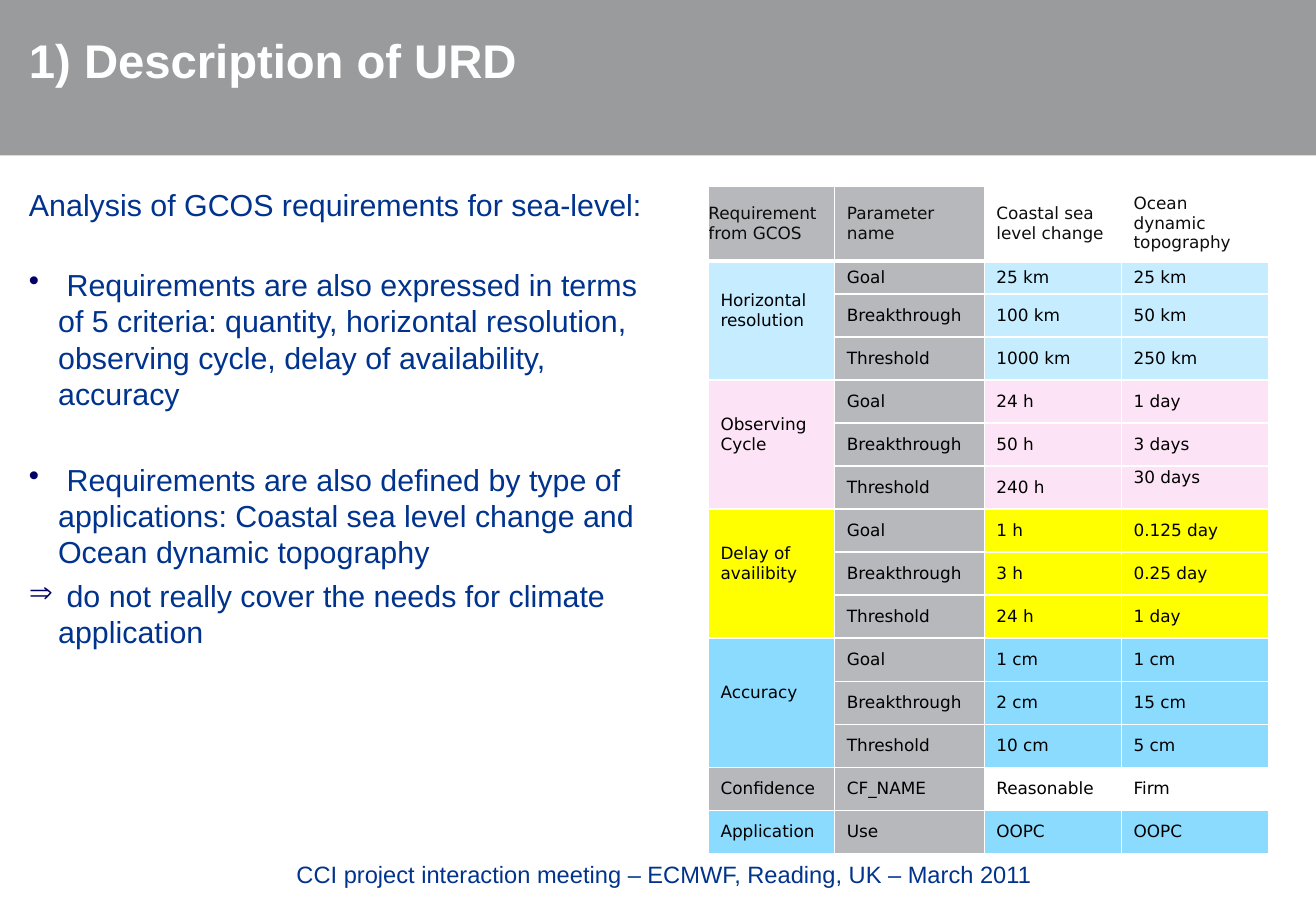
from pptx import Presentation
from pptx.dml.color import RGBColor as Color
from pptx.enum.shapes import MSO_SHAPE as Shape
from pptx.enum.text import MSO_ANCHOR as Anchor, PP_ALIGN as Align
from pptx.oxml import parse_xml
from pptx.oxml.ns import nsdecls
from pptx.util import Inches, Pt

COLORS = {
    "banner": "9A9B9C", "navy": "00338D", "bullet": "000066", "white": "FFFFFF",
    "black": "000000", "heading": "0D0D0D", "grey": "B6B8BC", "pale": "C5EDFF",
    "pink": "FDE3F6", "yellow": "FFFF00", "blue": "8BDBFF",
}
HEADINGS = ["Requirement from GCOS", "Parameter name",
            "Coastal sea level change", "Ocean dynamic topography"]
LEVELS = ["Goal", "Breakthrough", "Threshold"]
CRITERIA = [
    ("Horizontal resolution", "pale", ["25 km", "100 km", "1000 km"], ["25 km", "50 km", "250 km"]),
    ("Observing Cycle", "pink", ["24 h", "50 h", "240 h"], ["1 day", "3 days", "30 days"]),
    ("Delay of availibity", "yellow", ["1 h", "3 h", "24 h"], ["0.125 day", "0.25 day", "1 day"]),
    ("Accuracy", "blue", ["1 cm", "2 cm", "10 cm"], ["1 cm", "15 cm", "5 cm"]),
]
CLOSING_ROWS = [
    (["Confidence", "CF_NAME", "Reasonable", "Firm"], ["grey", "grey", "white", "white"]),
    (["Application", "Use", "OOPC", "OOPC"], ["blue", "grey", "blue", "blue"]),
]
COLUMN_WIDTHS = [1.04, 1.23, 1.13, 1.21]
HEADER_HEIGHT, FIRST_HEIGHT, TABLE_HEIGHT = 0.62, 0.27, 5.5
RAISED = 0.16


def color(name):
    """Return the named colour."""
    return Color.from_string(COLORS[name])


def write(para, text, size=18, font="Arial", ink="navy", bold=False,
          bullet=None, before=0, spacing=None, align=None):
    """Write formatted text into a paragraph."""
    if bullet:
        props = para._p.get_or_add_pPr()
        props.set("marL", str(Inches(0.24)))
        props.set("indent", str(-Inches(0.24)))
        props.append(parse_xml(f'<a:buClr {nsdecls("a")}><a:srgbClr val="{COLORS["bullet"]}"/></a:buClr>'))
        props.append(parse_xml(f'<a:buChar {nsdecls("a")} char="{bullet}"/>'))
    if before:
        para.space_before = Pt(before)
    if spacing:
        para.line_spacing = spacing
    if align is not None:
        para.alignment = align
    span = para.add_run()
    span.text = text
    span.font.size = Pt(size)
    span.font.name = font
    span.font.bold = bold
    span.font.color.rgb = color(ink)


def add_box(page, left, top, width, height):
    """Add a wrapping text box and return its frame."""
    box = page.shapes.add_textbox(Inches(left), Inches(top), Inches(width), Inches(height))
    box.text_frame.word_wrap = True
    return box.text_frame


def add_banner(page):
    """Add the grey band behind the title."""
    band = page.shapes.add_shape(Shape.RECTANGLE, 0, 0, Inches(10.83), Inches(1.28))
    band.shadow.inherit = False
    band.fill.solid()
    band.fill.fore_color.rgb = color("banner")
    band.line.fill.background()


def fill_cell(cell, text, fill, ink="black", left=0.1, right=0.1, top=0, bottom=0,
              under=1, align=None):
    """Set a cell's text, margins, fill and white borders."""
    cell.vertical_anchor = Anchor.MIDDLE
    cell.margin_left, cell.margin_right = Inches(left), Inches(right)
    cell.margin_top, cell.margin_bottom = Inches(top), Inches(bottom)
    props = cell._tc.get_or_add_tcPr()
    for side, points in (("L", 1), ("R", 1), ("T", 1), ("B", under)):
        props.append(parse_xml(
            f'<a:ln{side} {nsdecls("a")} w="{Pt(points)}"><a:solidFill>'
            f'<a:srgbClr val="{COLORS["white"]}"/></a:solidFill></a:ln{side}>'))
    cell.fill.solid()
    cell.fill.fore_color.rgb = color(fill)
    if text:
        write(cell.text_frame.paragraphs[0], text, size=10, font="DejaVu Sans", ink=ink, align=align)


def add_requirements(page):
    """Add the table of GCOS requirements."""
    count = 1 + len(CRITERIA) * len(LEVELS) + len(CLOSING_ROWS)
    table = page.shapes.add_table(count, 4, Inches(5.83), Inches(1.53), Inches(4.61),
                                  Inches(TABLE_HEIGHT)).table
    table.first_row = table.horz_banding = False
    for column, width in zip(table.columns, COLUMN_WIDTHS):
        column.width = Inches(width)
    regular = (TABLE_HEIGHT - HEADER_HEIGHT - FIRST_HEIGHT) / (count - 2)
    heights = [HEADER_HEIGHT, FIRST_HEIGHT] + [regular] * (count - 2)
    for row, height in zip(table.rows, heights):
        row.height = Inches(height)

    for index, heading in enumerate(HEADINGS):
        side = 0.1 if index else 0
        fill_cell(table.cell(0, index), heading, "grey" if index < 2 else "white", ink="heading",
                  left=side, right=side, top=0.05, bottom=0.05, under=3,
                  align=None if index else Align.JUSTIFY)
    for group, (name, fill, coastal, ocean) in enumerate(CRITERIA):
        first = 1 + group * len(LEVELS)
        for step, values in enumerate(zip(LEVELS, coastal, ocean)):
            row = first + step
            fill_cell(table.cell(row, 0), "" if step else name, fill, bottom=RAISED)
            for index, value in enumerate(values, 1):
                fill_cell(table.cell(row, index), value, "grey" if index == 1 else fill,
                          bottom=RAISED if value == "30 days" else 0)
        table.cell(first, 0).merge(table.cell(first + len(LEVELS) - 1, 0))
    for row, (values, fills) in enumerate(CLOSING_ROWS, count - len(CLOSING_ROWS)):
        for index, (value, fill) in enumerate(zip(values, fills)):
            fill_cell(table.cell(row, index), value, fill)


def add_analysis(page):
    """Add the analysis text with its bullets."""
    frame = add_box(page, 0.14, 1.48, 5.42, 4.34)
    write(frame.paragraphs[0], "Analysis of GCOS requirements for sea-level:")
    points = [
        ("•", 26, " Requirements are also expressed in terms of 5 criteria: quantity, "
                  "horizontal resolution, observing cycle, delay of availability, accuracy"),
        ("•", 29, " Requirements are also defined by type of applications: "
                  "Coastal sea level change and Ocean dynamic topography"),
        ("⇒", 4, " do not really cover the needs for climate application"),
    ]
    for bullet, before, text in points:
        write(frame.add_paragraph(), text, bullet=bullet, before=before)


def main():
    """Build and save the slide."""
    deck = Presentation()
    deck.slide_width, deck.slide_height = Inches(10.83), Inches(7.5)
    page = deck.slides.add_slide(deck.slide_layouts[6])
    add_banner(page)
    footer = add_box(page, 2.2, 6.98, 6.84, 0.52)
    footer.margin_left, footer.margin_top = Inches(0.24), Inches(0.1)
    write(footer.paragraphs[0], "CCI project interaction meeting – ECMWF, Reading, UK – March 2011", size=14)
    title = add_box(page, 0.14, 0.28, 10.36, 0.77)
    write(title.paragraphs[0], "1) Description of URD", size=28, ink="white", bold=True, spacing=0.85)
    add_requirements(page)
    add_analysis(page)
    deck.save("out.pptx")


if __name__ == "__main__":
    main()
